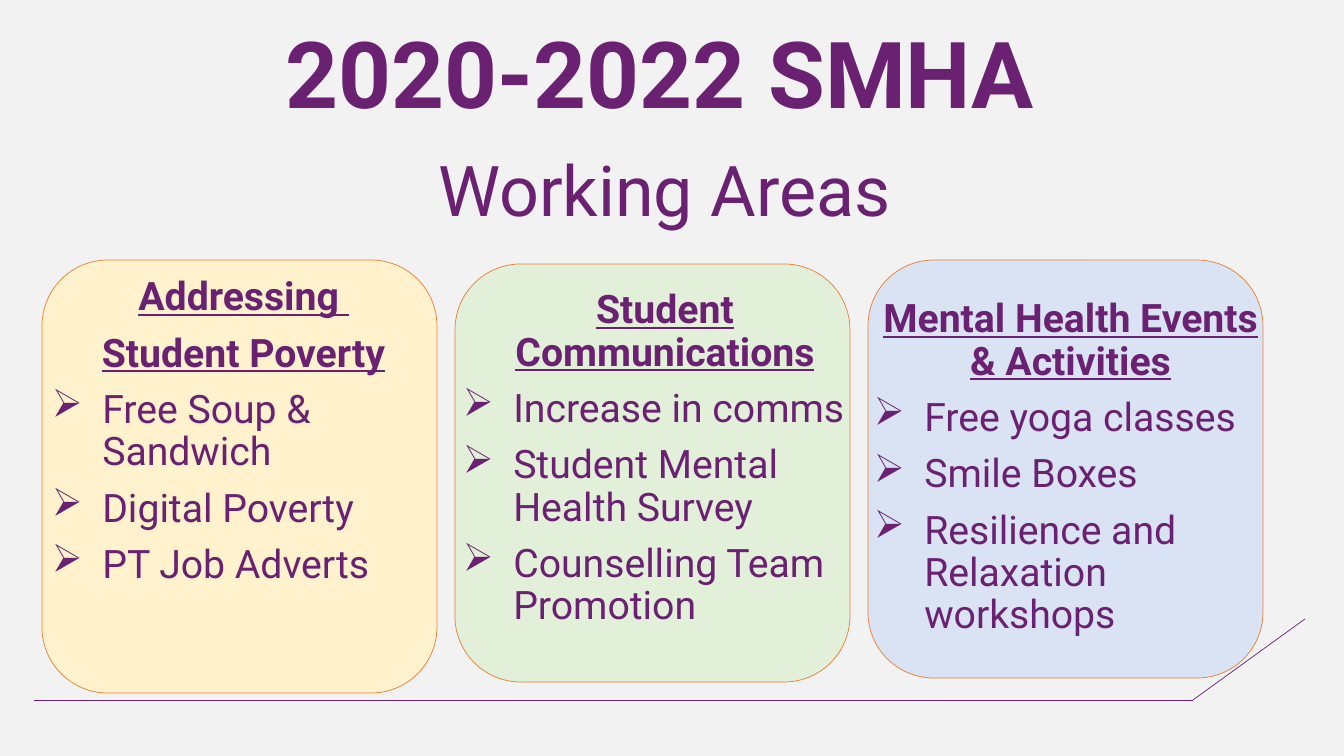
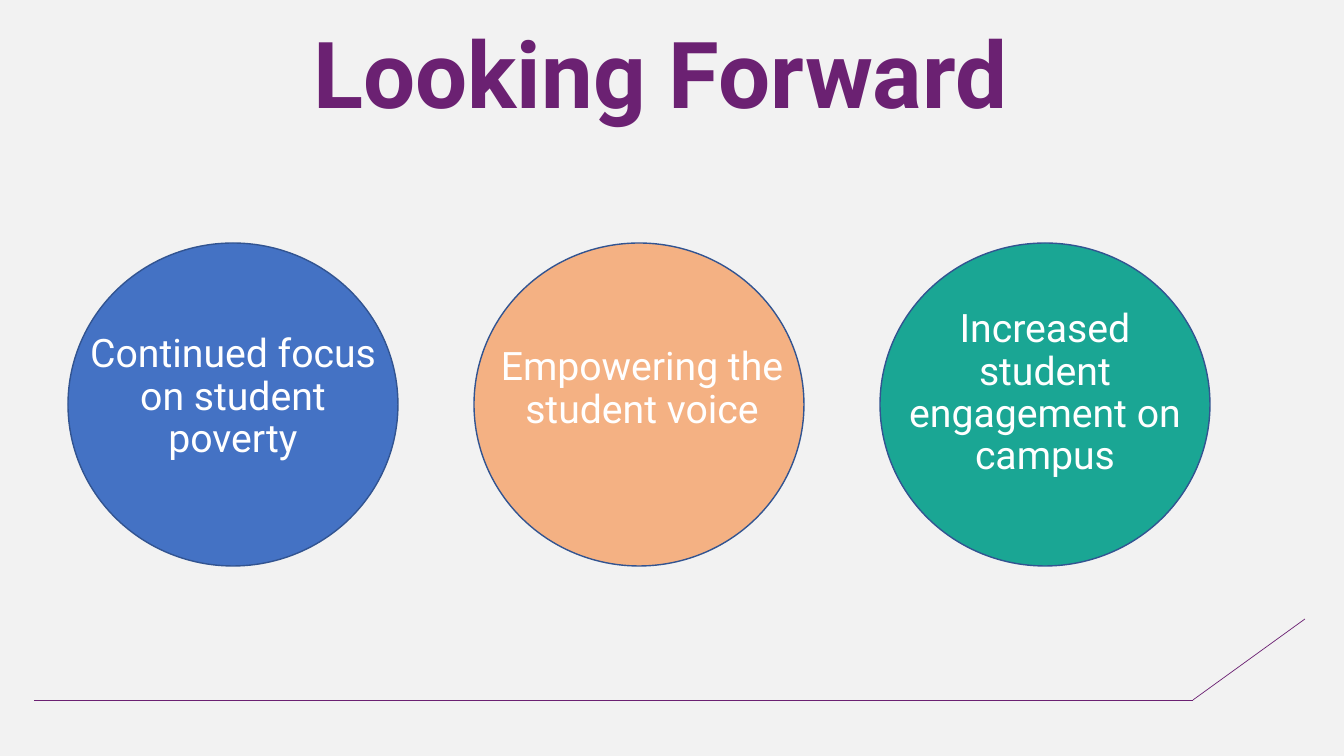
from lxml import etree
from pptx import Presentation
from pptx import util as u
from pptx.dml.color import RGBColor
from pptx.enum import shapes, text
from pptx.oxml.ns import qn

PX = 914400 / 100.8
PURPLE, WHITE, BACKGROUND = "6B2172", "FFFFFF", "F2F2F2"
FONT = "Roboto"


def px(*lengths):
    return [u.Emu(round(n * PX)) for n in lengths]


def add_text(tf, lines, size, colour=PURPLE, bold=False, underline=False, bullet=False):
    """Append lines to a frame, centred or as a bullet list; the first one fills the empty paragraph."""
    tf.word_wrap = True
    tf.auto_size = text.MSO_AUTO_SIZE.NONE
    tf.vertical_anchor = text.MSO_ANCHOR.TOP
    for line in lines:
        first = not tf.text
        p = tf.paragraphs[0] if first else tf.add_paragraph()
        p.line_spacing = 0.9
        p.space_before = u.Pt(0 if first else 10)
        p.alignment = text.PP_ALIGN.LEFT if bullet else text.PP_ALIGN.CENTER
        if bullet:
            pPr = p._p.get_or_add_pPr()
            indent = u.Inches(0.5)
            pPr.set("marL", str(indent))
            pPr.set("indent", str(-indent))
            etree.SubElement(pPr, qn("a:buChar")).set("char", "➢")
        r = p.add_run()
        r.text = line
        r.font.name, r.font.size = FONT, u.Pt(size)
        r.font.bold, r.font.underline = bold, underline
        r.font.color.rgb = RGBColor.from_string(colour)


prs = Presentation()
prs.slide_width, prs.slide_height = px(1344, 756)
fill = prs.slide_master.background.fill
fill.solid()
fill.fore_color.rgb = RGBColor.from_string(BACKGROUND)

# Shared title and footer rule
slides = []
for title in ("2020-2022 SMHA", "Looking Forward"):
    s = prs.slides.add_slide(prs.slide_layouts[5])
    slides.append(s)
    sp = s.shapes.title
    sp.left, sp.top, sp.width, sp.height = px(186, 24, 949, 124)
    add_text(sp.text_frame, [title], 66, bold=True)
    for ends in ((34, 700, 1193, 700), (1193, 700, 1305, 619)):
        rule = s.shapes.add_connector(shapes.MSO_CONNECTOR.STRAIGHT, *px(*ends))
        rule.line.color.rgb = RGBColor.from_string(PURPLE)
        rule.line.width = u.Pt(0.5)
        etree.SubElement(rule._element.spPr, qn("a:effectLst"))
areas, future = slides

# Working areas: three cards
subtitle = areas.shapes.add_textbox(*px(190, 151, 949, 109))
add_text(subtitle.text_frame, ["Working Areas"], 50)

# fill, card top and height, text box, heading lines, bullets
cards = [
    ("FFF2CC", 260, 433, (42, 272, 403, 374), ["Addressing ", "Student Poverty"],
     ["Free Soup & Sandwich", "Digital Poverty", "PT Job Adverts"]),
    ("E2F0D9", 264, 418, (453, 285, 424, 374), ["Student Communications"],
     ["Increase in comms", "Student Mental Health Survey", "Counselling Team Promotion"]),
    ("DAE3F3", 260, 418, (864, 294, 413, 374), ["Mental Health Events & Activities"],
     ["Free yoga classes", "Smile Boxes", "Resilience and Relaxation workshops"]),
]
# Looking forward: three circles (fill, text box left and top, label)
circles = [
    ("4472C4", 71, 329, "Continued focus on student poverty"),
    ("F4B183", 480, 342, "Empowering the student voice"),
    ("1AA694", 883, 304, "Increased student engagement on campus"),
]

panels = [(areas, shapes.MSO_SHAPE.ROUNDED_RECTANGLE, (42 + 413 * i, top, 395, height),
           colour, "ED7D31", 0.5)
          for i, (colour, top, height, *_) in enumerate(cards)]
panels += [(future, shapes.MSO_SHAPE.OVAL, (68 + 406 * i, 243, 330, 323), colour, "325491", 1)
           for i, (colour, *_) in enumerate(circles)]
for s, kind, box, colour, outline, weight in panels:
    sp = s.shapes.add_shape(kind, *px(*box))
    sp.shadow.inherit = False
    sp.fill.solid()
    sp.fill.fore_color.rgb = RGBColor.from_string(colour)
    sp.line.color.rgb = RGBColor.from_string(outline)
    sp.line.width = u.Pt(weight)

for *_, box, heading, bullets in cards:
    tf = areas.shapes.add_textbox(*px(*box)).text_frame
    add_text(tf, heading, 28, bold=True, underline=True)
    add_text(tf, bullets, 28, bullet=True)

for _, left, top, label in circles:
    tf = future.shapes.add_textbox(*px(left, top, 324, 349)).text_frame
    add_text(tf, [label], 28, WHITE)

prs.save("out.pptx")
